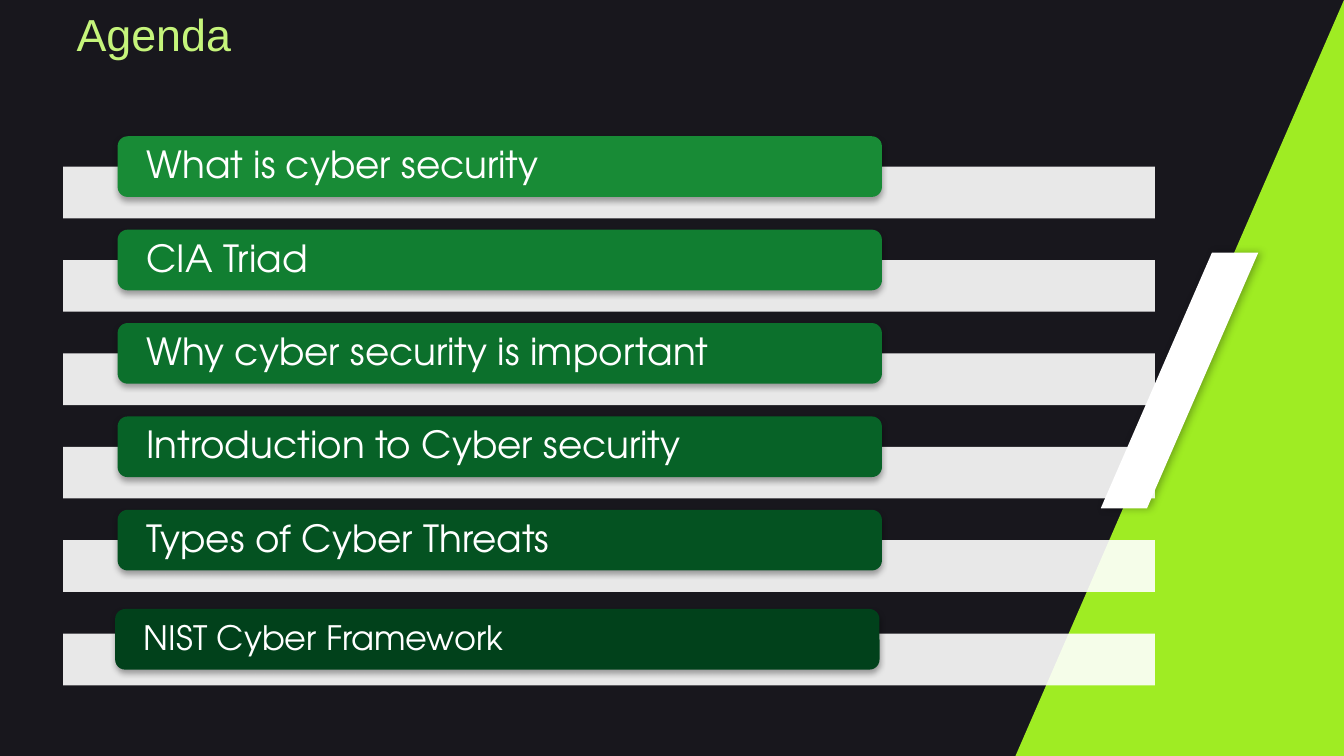
from dataclasses import dataclass

from lxml.etree import SubElement
from pptx import Presentation
from pptx.dml.color import RGBColor
from pptx.enum.shapes import MSO_SHAPE
from pptx.enum.text import MSO_ANCHOR, PP_ALIGN
from pptx.oxml.ns import qn
from pptx.util import Pt

TITLE = "Agenda"
# topic, pill colour, text size, shift of the pill from its grid place
TOPICS = [
    ("What is cyber security", "188B36", 20, (0, 0)),
    ("CIA Triad", "117E31", 20, (0, 0)),
    ("Why cyber security is important", "0C702C", 20, (0, 0)),
    ("Introduction to Cyber security", "076227", 20, (0, 0)),
    ("Types of Cyber Threats", "045221", 20, (0, 0)),
    ("NIST Cyber Framework", "01411B", 18, (-1.3, 3.1)),
]
WEDGE = [(544, 405), (720, 0), (720, 405)]
SLASH = [(649.3, 135.3), (589.7, 272.3), (614.5, 272.3), (674.1, 135.3)]


@dataclass(frozen=True)
class Theme:
    background: str = "18171D"
    accent: str = "9FEC23"
    title: str = "C5F47B"
    white: str = "FFFFFF"
    title_font: str = "Arial"
    topic_font: str = "TeX Gyre Adventor"
    title_size: int = 24


THEME = Theme()
ROW_PITCH = 50.03
BAR_LEFT, BAR_TOP, BAR_WIDTH, BAR_HEIGHT = 33.8, 89.3, 585, 27.7
PILL_LEFT, PILL_TOP, PILL_WIDTH, PILL_HEIGHT = 63, 73, 409.5, 32.5


def paint(shape, colour):
    """Give a shape a plain fill with neither outline nor shadow."""
    shape.shadow.inherit = False
    shape.fill.solid()
    shape.fill.fore_color.rgb = RGBColor.from_string(colour)
    shape.line.fill.background()


def set_opacity(shape, percent):
    colour = shape._element.spPr.find(qn("a:solidFill"))[0]
    SubElement(colour, qn("a:alpha"), val=str(percent * 1000))


def cast_shadow(shape, opacity, blur, distance, angle):
    effects = shape._element.spPr.find(qn("a:effectLst"))
    outer = SubElement(effects, qn("a:outerShdw"), blurRad=str(Pt(blur)),
                       dist=str(Pt(distance)), dir=str(angle * 60000),
                       algn="ctr", rotWithShape="0")
    colour = SubElement(outer, qn("a:srgbClr"), val="000000")
    SubElement(colour, qn("a:alpha"), val=str(opacity * 1000))


def add_polygon(slide, points, colour):
    corners = [(Pt(x), Pt(y)) for x, y in points]
    builder = slide.shapes.build_freeform(*corners[0])
    builder.add_line_segments(corners[1:], close=True)
    polygon = builder.convert_to_shape()
    paint(polygon, colour)
    return polygon


def write(paragraph, text, font, size, colour):
    run = paragraph.add_run()
    run.text = text
    run.font.name = font
    run.font.size = Pt(size)
    run.font.color.rgb = RGBColor.from_string(colour)


def add_title(slide):
    title = slide.shapes.title
    title.left, title.top, title.width, title.height = Pt(33.8), Pt(0), Pt(281.5), Pt(36)
    title.text_frame.vertical_anchor = MSO_ANCHOR.TOP
    paragraph = title.text_frame.paragraphs[0]
    paragraph.alignment = PP_ALIGN.LEFT
    write(paragraph, TITLE, THEME.title_font, THEME.title_size, THEME.title)


def add_topic(slide, row, topic, colour, size, shift):
    offset = row * ROW_PITCH
    bar = slide.shapes.add_shape(MSO_SHAPE.RECTANGLE, Pt(BAR_LEFT), Pt(BAR_TOP + offset),
                                 Pt(BAR_WIDTH), Pt(BAR_HEIGHT))
    paint(bar, THEME.white)
    set_opacity(bar, 90)

    pill = slide.shapes.add_shape(MSO_SHAPE.ROUNDED_RECTANGLE, Pt(PILL_LEFT + shift[0]),
                                  Pt(PILL_TOP + offset + shift[1]),
                                  Pt(PILL_WIDTH), Pt(PILL_HEIGHT))
    paint(pill, colour)
    cast_shadow(pill, opacity=35, blur=3.1, distance=1.8, angle=90)
    frame = pill.text_frame
    frame.word_wrap = True
    frame.vertical_anchor = MSO_ANCHOR.MIDDLE
    # The text area of a rounded rectangle is already inset by its corners
    frame.margin_left = frame.margin_right = Pt(13.9)
    frame.margin_top = frame.margin_bottom = 0
    paragraph = frame.paragraphs[0]
    paragraph.alignment = PP_ALIGN.LEFT
    paragraph.line_spacing = 0.9
    write(paragraph, topic, THEME.topic_font, size, THEME.white)


def main():
    deck = Presentation()
    deck.slide_width, deck.slide_height = Pt(720), Pt(405)
    slide = deck.slides.add_slide(deck.slide_layouts[5])
    slide.background.fill.solid()
    slide.background.fill.fore_color.rgb = RGBColor.from_string(THEME.background)

    add_polygon(slide, WEDGE, THEME.accent)
    slash = add_polygon(slide, SLASH, THEME.white)
    cast_shadow(slash, opacity=30, blur=4.5, distance=1.5, angle=0)
    add_title(slide)
    for row, topic in enumerate(TOPICS):
        add_topic(slide, row, *topic)
    deck.save("out.pptx")


if __name__ == "__main__":
    main()
